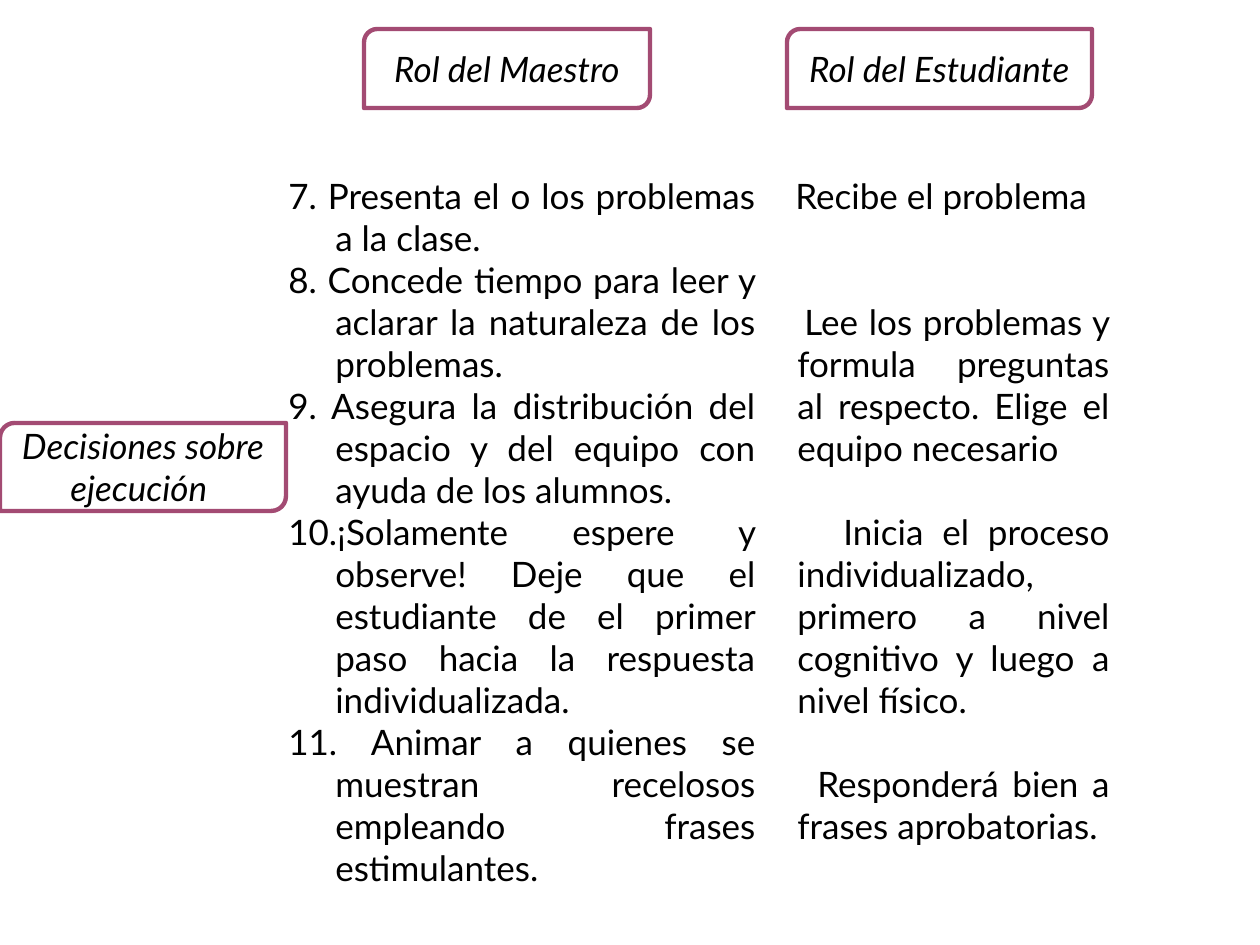
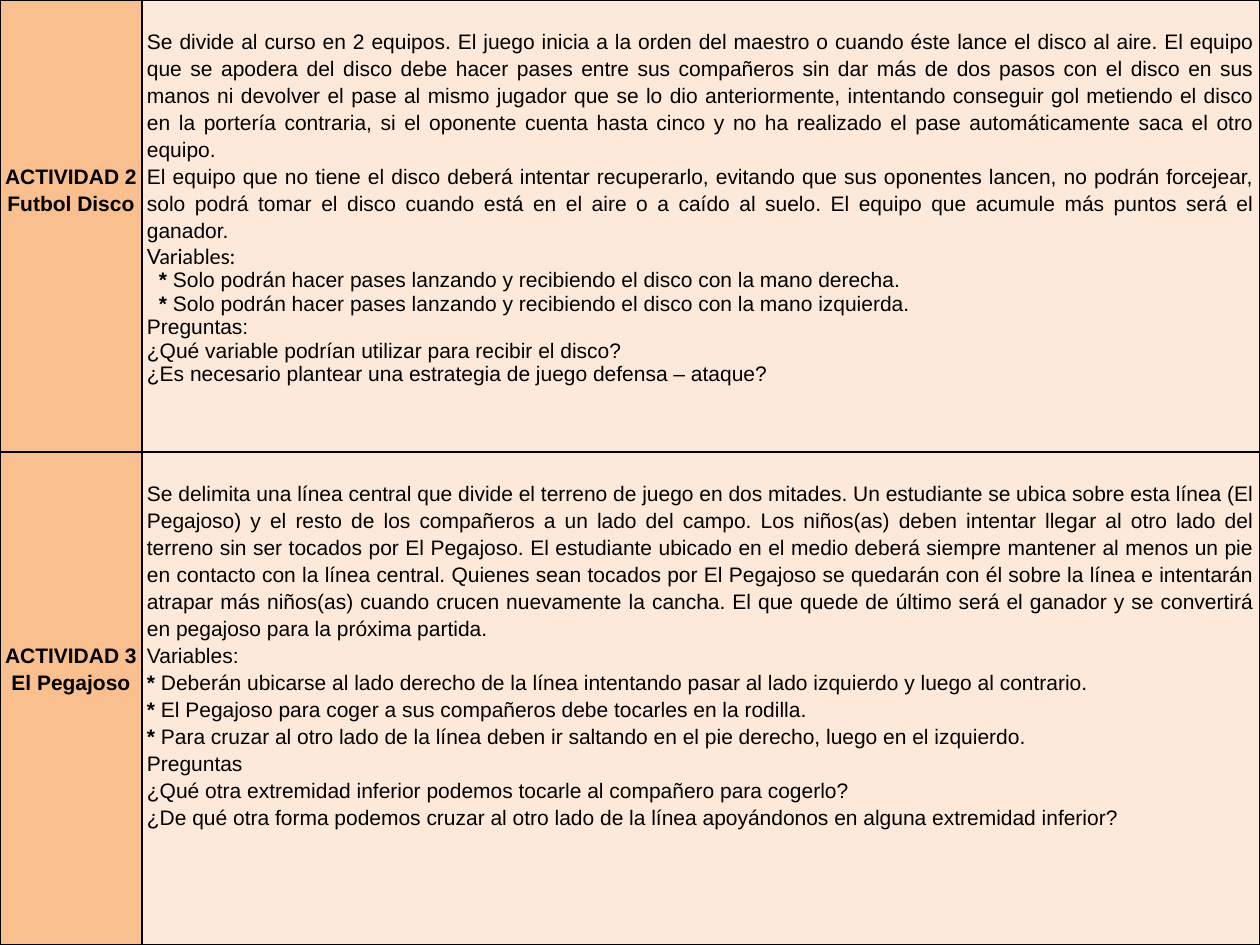
from dataclasses import dataclass

from lxml import etree
from pptx import Presentation
from pptx.dml.color import RGBColor
from pptx.enum.shapes import MSO_SHAPE
from pptx.enum.text import MSO_ANCHOR, PP_ALIGN
from pptx.oxml.ns import qn
from pptx.util import Emu, Pt

DIAGONAL = MSO_SHAPE.ROUND_2_DIAG_RECTANGLE
MIDDLE, TOP = MSO_ANCHOR.MIDDLE, MSO_ANCHOR.TOP
CENTER, JUSTIFY = PP_ALIGN.CENTER, PP_ALIGN.JUSTIFY
EMU_PER_INCH, PX_PER_INCH = 914400, 126
BLANK_LAYOUT = 6


@dataclass(frozen=True)
class Theme:
    ink: str = "000000"
    frame: str = "A34B73"
    name_fill: str = "FABF8F"
    detail_fill: str = "FDE9D9"
    role_font: str = "Lato"
    table_font: str = "Arial"
    role_size: int = 20
    table_size: int = 12
    frame_width: float = 2.5
    border_width: int = 1
    loose: float = 1.15
    table_line: int = 27
    hang: int = 47
    cell_margin: int = 5


T = Theme()

HEADINGS = [
    ("Decisiones sobre ejecución ", (0, 423, 286, 88)),
    ("Rol del Maestro", (364, 29, 286, 79)),
    ("Rol del Estudiante", (787, 29, 305, 79)),
]

TEACHER = [
    "7. Presenta el o los problemas a la clase.",
    "8. Concede tiempo para leer y aclarar la naturaleza de los problemas.",
    "9. Asegura la distribución del espacio y del equipo con ayuda de los alumnos.",
    "10.¡Solamente espere y observe! Deje que el estudiante de el primer paso "
    "hacia la respuesta individualizada.",
    "11. Animar a quienes se muestran recelosos empleando frases estimulantes.",
]

STUDENT = [
    ("Recibe el problema", -2, 0),
    ("Lee los problemas y formula preguntas al respecto. Elige el equipo necesario", 7, 48),
    ("Inicia el proceso individualizado, primero a nivel cognitivo y luego a nivel físico.", 46, 24),
    ("Responderá bien a frases aprobatorias.", 20, 24),
]


@dataclass(frozen=True)
class Line:
    text: str
    starred: bool = False
    spacing: float = T.loose
    font: str = T.table_font
    left: int = 0


ACTIVITIES = [
    (["ACTIVIDAD 2", "Futbol Disco"], 6, [
        Line("Se divide al curso en 2 equipos. El juego inicia a la orden del maestro o cuando "
             "éste lance el disco al aire. El equipo que se apodera del disco debe hacer pases "
             "entre sus compañeros sin dar más de dos pasos con el disco en sus manos ni devolver "
             "el pase al mismo jugador que se lo dio anteriormente, intentando conseguir gol "
             "metiendo el disco en la portería contraria, si el oponente cuenta hasta cinco y no "
             "ha realizado el pase automáticamente saca el otro equipo."),
        Line("El equipo que no tiene el disco deberá intentar recuperarlo, evitando que sus "
             "oponentes lancen, no podrán forcejear, solo podrá tomar el disco cuando está en el "
             "aire o a caído al suelo. El equipo que acumule más puntos será el ganador."),
        Line("Variables:", spacing=1.0, font=T.role_font),
        Line("Solo podrán hacer pases lanzando y recibiendo el disco con la mano derecha.",
             True, 1.0, left=12),
        Line("Solo podrán hacer pases lanzando y recibiendo el disco con la mano izquierda.",
             True, 1.0, left=12),
        Line("Preguntas:", spacing=1.0),
        Line("¿Qué variable podrían utilizar para recibir el disco?", spacing=1.0),
        Line("¿Es necesario plantear una estrategia de juego defensa – ataque?", spacing=1.0),
    ]),
    (["ACTIVIDAD 3", "El Pegajoso"], 7, [
        Line("Se delimita una línea central que divide el terreno de juego en dos mitades. Un "
             "estudiante se ubica sobre esta línea (El Pegajoso) y el resto de los compañeros a "
             "un lado del campo. Los niños(as) deben intentar llegar al otro lado del terreno sin "
             "ser tocados por El Pegajoso. El estudiante ubicado en el medio deberá siempre "
             "mantener al menos un pie en contacto con la línea central. Quienes sean tocados por "
             "El Pegajoso se quedarán con él sobre la línea e intentarán atrapar más niños(as) "
             "cuando crucen nuevamente la cancha. El que quede de último será el ganador y se "
             "convertirá en pegajoso para la próxima partida."),
        Line("Variables:"),
        Line("Deberán ubicarse al lado derecho de la línea intentando pasar al lado izquierdo y "
             "luego al contrario.", True),
        Line("El Pegajoso para coger a sus compañeros debe tocarles en la rodilla.", True),
        Line("Para cruzar al otro lado de la línea deben ir saltando en el pie derecho, luego en "
             "el izquierdo.", True),
        Line("Preguntas"),
        Line("¿Qué otra extremidad inferior podemos tocarle al compañero para cogerlo?"),
        Line("¿De qué otra forma podemos cruzar al otro lado de la línea apoyándonos en alguna "
             "extremidad inferior?"),
    ]),
]


def px(n):
    return Emu(round(n * EMU_PER_INCH / PX_PER_INCH))


def rgb(color):
    return RGBColor.from_string(color)


def next_paragraph(tf, index, align, left=0, first=0):
    p = tf.paragraphs[0] if index == 0 else tf.add_paragraph()
    p.alignment = align
    pPr = p._p.get_or_add_pPr()
    pPr.set("marL", str(px(left)))
    pPr.set("indent", str(px(first)))
    return p


def add_run(p, text, font, size, bold=False, italic=False):
    r = p.add_run()
    r.text = text
    r.font.name, r.font.size = font, Pt(size)
    r.font.bold, r.font.italic = bold, italic
    r.font.color.rgb = rgb(T.ink)


def add_heading(s, text, box):
    sp = s.shapes.add_shape(DIAGONAL, *map(px, box))
    sp.shadow.inherit = False
    sp.fill.background()
    sp.line.color.rgb = rgb(T.frame)
    sp.line.width = Pt(T.frame_width)
    tf = sp.text_frame
    tf.word_wrap = True
    tf.vertical_anchor = MIDDLE
    add_run(next_paragraph(tf, 0, CENTER), text, T.role_font, T.role_size, italic=True)


def add_role_column(s, items, box):
    tf = s.shapes.add_textbox(*map(px, box)).text_frame
    tf.word_wrap = True
    for i, (text, first, before) in enumerate(items):
        p = next_paragraph(tf, i, JUSTIFY, T.hang, first)
        p.space_before = Pt(before)
        add_run(p, text, T.role_font, T.role_size)


def set_borders(cell):
    tcPr = cell._tc.get_or_add_tcPr()
    for i, side in enumerate(("a:lnL", "a:lnR", "a:lnT", "a:lnB")):
        ln = etree.Element(qn(side), w=str(Pt(T.border_width)))
        fill = etree.SubElement(ln, qn("a:solidFill"))
        etree.SubElement(fill, qn("a:srgbClr"), val=T.ink)
        tcPr.insert(i, ln)


def format_cell(cell, fill, top):
    cell.fill.solid()
    cell.fill.fore_color.rgb = rgb(fill)
    cell.margin_left = cell.margin_right = px(T.cell_margin)
    cell.margin_top, cell.margin_bottom = px(top), 0
    cell.vertical_anchor = TOP
    set_borders(cell)


def fill_name(cell, names, blank_lines):
    format_cell(cell, T.name_fill, T.table_line * blank_lines)
    for i, name in enumerate(names):
        p = next_paragraph(cell.text_frame, i, CENTER)
        p.line_spacing = T.loose
        add_run(p, name, T.table_font, T.table_size, bold=True)


def fill_detail(cell, lines):
    format_cell(cell, T.detail_fill, T.table_line)
    for i, line in enumerate(lines):
        p = next_paragraph(cell.text_frame, i, JUSTIFY, line.left)
        p.line_spacing = line.spacing
        if line.starred:
            add_run(p, "* ", line.font, T.table_size, bold=True)
        add_run(p, line.text, line.font, T.table_size)


def add_activity_table(s, widths, heights):
    frame = s.shapes.add_table(len(heights), len(widths), 0, 0,
                               px(sum(widths)), px(sum(heights)))
    table = frame.table
    table.first_row = table.horz_banding = False
    for column, width in zip(table.columns, widths):
        column.width = px(width)
    for row, height, (names, blank_lines, lines) in zip(table.rows, heights, ACTIVITIES):
        row.height = px(height)
        fill_name(row.cells[0], names, blank_lines)
        fill_detail(row.cells[1], lines)


def main():
    prs = Presentation()
    prs.slide_width, prs.slide_height = px(1260), px(945)
    layout = prs.slide_layouts[BLANK_LAYOUT]

    s = prs.slides.add_slide(layout)
    for text, box in HEADINGS:
        add_heading(s, text, box)
    add_role_column(s, [(text, -T.hang, 0) for text in TEACHER], (276, 168, 492, 733))
    add_role_column(s, STUDENT, (738, 168, 384, 733))

    s = prs.slides.add_slide(layout)
    add_activity_table(s, (142, 1118), (452, 493))

    prs.save("out.pptx")


if __name__ == "__main__":
    main()
